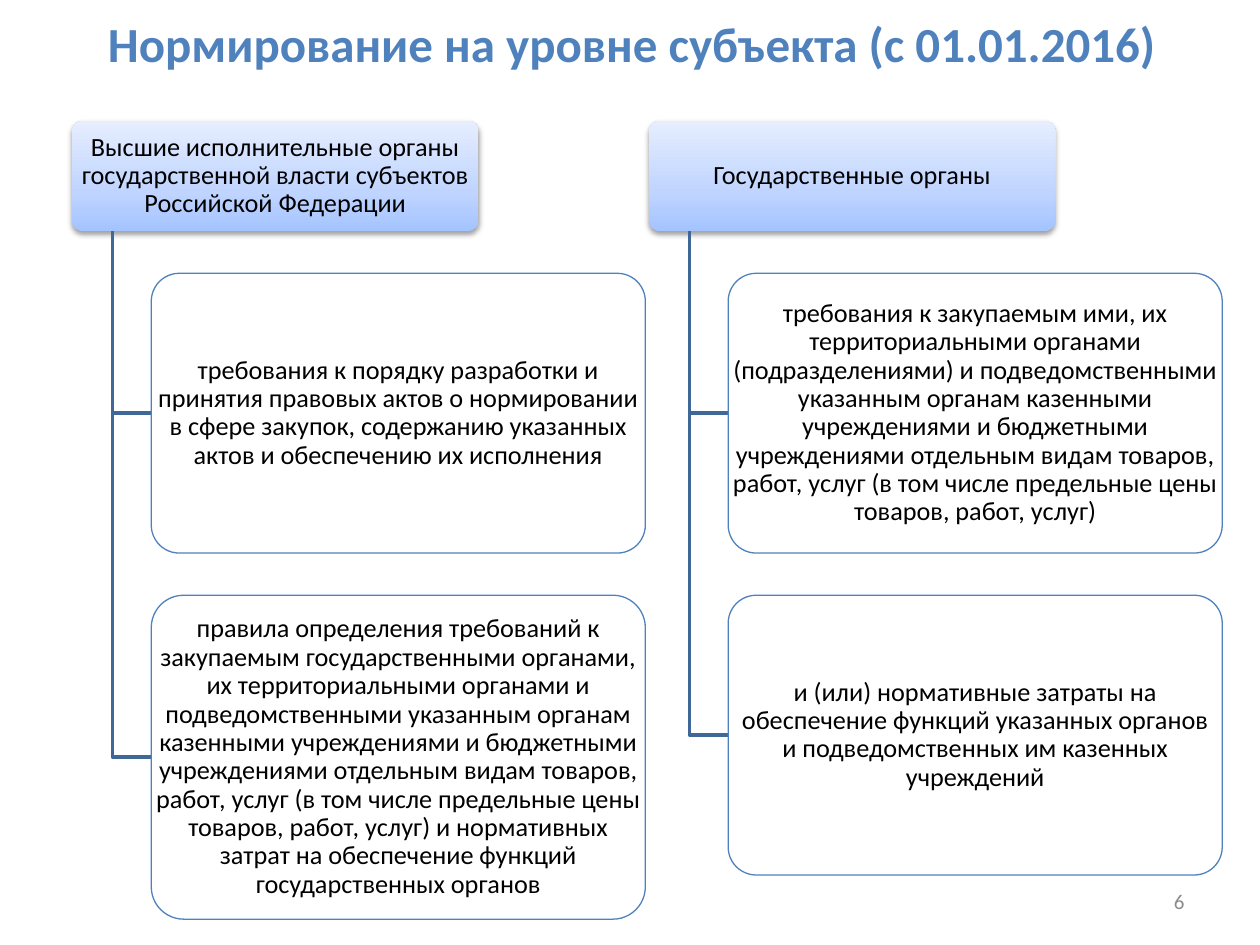
import copy

import lxml.etree
import pptx
import pptx.dml.color
import pptx.enum.shapes
import pptx.enum.text
import pptx.oxml
import pptx.oxml.ns
import pptx.util
from pptx.util import Cm

RGBColor = pptx.dml.color.RGBColor
ALIGN = pptx.enum.text.PP_ALIGN
ROUNDED = pptx.enum.shapes.MSO_SHAPE.ROUNDED_RECTANGLE
qn = pptx.oxml.ns.qn

BLUE = RGBColor(0x4F, 0x81, 0xBD)
BRANCH_BLUE = RGBColor(0x3F, 0x67, 0x97)
BLACK = RGBColor(0, 0, 0)
WHITE = RGBColor(0xFF, 0xFF, 0xFF)
GRAY = RGBColor(0x8C, 0x8C, 0x8C)
HEADER_GRADIENT = [
    (0, RGBColor(0xA4, 0xC4, 0xFF)),
    (0.35, RGBColor(0xBF, 0xD4, 0xFF)),
    (1, RGBColor(0xE6, 0xEE, 0xFF)),
]
HEADER_SHADOW = (
    '<a:effectLst xmlns:a="http://schemas.openxmlformats.org/drawingml/2006/main">'
    '<a:outerShdw blurRad="39370" dist="20320" dir="5400000" rotWithShape="0">'
    '<a:srgbClr val="000000"><a:alpha val="38000"/></a:srgbClr>'
    '</a:outerShdw></a:effectLst>'
)

# All measures in centimetres
COLUMN_LEFTS = (1.45, 13.08)
HEADER_TOP, HEADER_WIDTH, HEADER_HEIGHT = 2.44, 8.2, 2.22
TRUNK_INDENT, BOX_INDENT, BOX_WIDTH = 0.82, 1.6, 9.96
GAP = 0.85

COLUMNS = [
    ("Высшие исполнительные органы государственной власти субъектов Российской Федерации", [
        (5.64, "требования к порядку разработки и принятия правовых актов о нормировании "
               "в сфере закупок, содержанию указанных актов и обеспечению их исполнения"),
        (6.53, "правила определения требований к закупаемым государственными органами, "
               "их территориальными органами и подведомственными указанным органам "
               "казенными учреждениями и бюджетными учреждениями отдельным видам товаров, "
               "работ, услуг (в том числе предельные цены товаров, работ, услуг) и "
               "нормативных затрат на обеспечение функций государственных органов"),
    ]),
    ("Государственные органы", [
        (5.64, "требования к закупаемым ими, их территориальными органами "
               "(подразделениями) и подведомственными указанным органам казенными "
               "учреждениями и бюджетными учреждениями отдельным видам товаров, "
               "работ, услуг (в том числе предельные цены товаров, работ, услуг)"),
        (5.64, "и (или) нормативные затраты на обеспечение функций указанных органов "
               "и подведомственных им казенных учреждений"),
    ]),
]

deck = pptx.Presentation()
deck.slide_width, deck.slide_height = Cm(25.4), Cm(19.05)
slide = deck.slides.add_slide(deck.slide_layouts[6])


def add_text(text, area, size, color, align=ALIGN.CENTER, bold=False, margins=(0.25, 0.13), spacing=1.0):
    """Add middle-anchored text; area is left, top, width, height in cm."""
    frame = slide.shapes.add_textbox(*map(Cm, area)).text_frame
    frame.word_wrap = True
    frame.vertical_anchor = pptx.enum.text.MSO_ANCHOR.MIDDLE
    frame.margin_left = frame.margin_right = Cm(margins[0])
    frame.margin_top = frame.margin_bottom = Cm(margins[1])
    frame.text = text
    paragraph = frame.paragraphs[0]
    paragraph.alignment = align
    paragraph.line_spacing = spacing
    font = paragraph.runs[0].font
    font.name, font.size, font.bold = "Calibri", pptx.util.Pt(size), bold
    font.color.rgb = color


def add_card(text, area):
    """Add a rounded rectangle with its text and return the rectangle."""
    card = slide.shapes.add_shape(ROUNDED, *map(Cm, area))
    card.adjustments[0] = 0.1
    card.shadow.inherit = False
    add_text(text, area, 15, BLACK, margins=(0.08, 0.05), spacing=0.9)
    return card


add_text("Нормирование на уровне субъекта (с 01.01.2016)", (1.3, 0, 22.86, 1.75), 28, BLUE, bold=True)

for left, (heading, boxes) in zip(COLUMN_LEFTS, COLUMNS):
    header = add_card(heading, (left, HEADER_TOP, HEADER_WIDTH, HEADER_HEIGHT))
    header.line.fill.background()
    header.fill.gradient()
    header.fill.gradient_angle = 90
    properties = header._element.spPr
    stop_list = properties.find(".//" + qn("a:gsLst"))
    stop_list.append(copy.deepcopy(stop_list[-1]))
    for stop, (position, color) in zip(header.fill.gradient_stops, HEADER_GRADIENT):
        stop.position = position
        stop.color.rgb = color
    properties.replace(properties.find(qn("a:effectLst")), pptx.oxml.parse_xml(HEADER_SHADOW))

    header_bottom = HEADER_TOP + HEADER_HEIGHT
    trunk_x, box_left = left + TRUNK_INDENT, left + BOX_INDENT
    top = header_bottom + GAP
    for height, requirement in boxes:
        middle = top + height / 2
        outline = slide.shapes.build_freeform(Cm(trunk_x), Cm(header_bottom))
        outline.add_line_segments(
            [(Cm(trunk_x), Cm(middle)), (Cm(box_left), Cm(middle))], close=False)
        branch = outline.convert_to_shape()
        branch.shadow.inherit = False
        branch.fill.background()
        branch.line.color.rgb = BRANCH_BLUE
        branch.line.width = pptx.util.Pt(2)

        box = add_card(requirement, (box_left, top, BOX_WIDTH, height))
        box.fill.solid()
        box.fill.fore_color.rgb = WHITE
        fill_color = box._element.spPr.find(qn("a:solidFill"))[0]
        lxml.etree.SubElement(fill_color, qn("a:alpha")).set("val", "90000")
        box.line.color.rgb = BLUE
        box.line.width = pptx.util.Pt(0.75)
        top += height + GAP

add_text("6", (18.2, 17.66, 5.93, 1.01), 12, GRAY, align=ALIGN.RIGHT)

deck.save("out.pptx")
